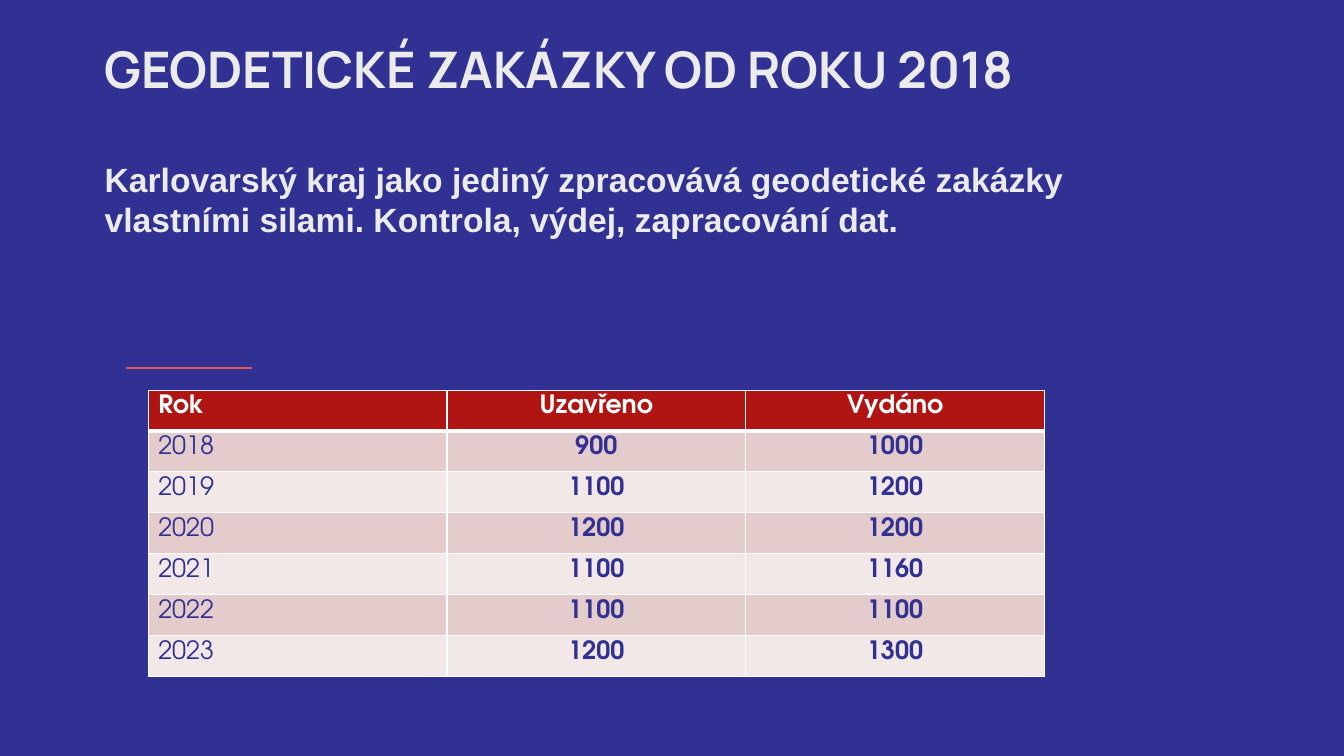
"""Build the slide on geodetic orders since 2018."""
from lxml import etree
from pptx import Presentation
from pptx.dml.color import RGBColor
from pptx.enum import shapes, text
from pptx.oxml import ns
from pptx.util import Inches, Pt

HEADING = "GEODETICKÉ ZAKÁZKY OD ROKU 2018"
SUMMARY = ("Karlovarský kraj jako jediný zpracovává geodetické zakázky "
           "vlastními silami. Kontrola, výdej, zapracování dat.")
ORDERS = [
    ("Rok", "Uzavřeno", "Vydáno"),
    ("2018", "900", "1000"),
    ("2019", "1100", "1200"),
    ("2020", "1200", "1200"),
    ("2021", "1100", "1160"),
    ("2022", "1100", "1100"),
    ("2023", "1200", "1300"),
]

NAVY = RGBColor(0x30, 0x31, 0x92)
PALE = RGBColor(0xEB, 0xEB, 0xEB)
CORAL = RGBColor(0xED, 0x56, 0x54)
RED = RGBColor(0xB0, 0x15, 0x13)
WHITE = RGBColor(0xFF, 0xFF, 0xFF)
BANDS = (RGBColor(0xF2, 0xE8, 0xE7), RGBColor(0xE4, 0xCC, 0xCC))

TABLE_WIDTH, TABLE_HEIGHT = Inches(8.89), Inches(2.84)


def style(paragraph, font_name, size, color, bold=True):
    for run in paragraph.runs:
        run.font.name = font_name
        run.font.size = Pt(size)
        run.font.color.rgb = color
        run.font.bold = bold


def add_borders(cell, top_width, bottom_width):
    properties = cell._tc.get_or_add_tcPr()
    widths = {"lnL": 1, "lnR": 1, "lnT": top_width, "lnB": bottom_width}
    for position, (side, width) in enumerate(widths.items()):
        border = etree.Element(ns.qn(f"a:{side}"), w=str(Pt(width)))
        fill = etree.SubElement(border, ns.qn("a:solidFill"))
        etree.SubElement(fill, ns.qn("a:srgbClr"), val=str(WHITE))
        properties.insert(position, border)


def add_intro(slide):
    box = slide.shapes.add_textbox(Inches(0.94), Inches(0.33), Inches(9.94), Inches(1.53))
    frame = box.text_frame
    frame.word_wrap = True
    heading = frame.paragraphs[0]
    heading.text = HEADING
    style(heading, "Manrope", 36, PALE)
    summary = frame.add_paragraph()
    summary.text = SUMMARY
    summary.space_before = Pt(43)
    style(summary, "Arial", 24, PALE)


def add_accent(slide):
    accent = slide.shapes.add_connector(
        shapes.MSO_CONNECTOR.STRAIGHT, Inches(1.26), Inches(3.65), Inches(2.49), Inches(3.65))
    accent.line.color.rgb = CORAL
    accent.line.width = Pt(2)
    accent.line._get_or_add_ln().set("cap", "rnd")
    etree.SubElement(accent._element.spPr, ns.qn("a:effectLst"))


def add_orders(slide):
    rows, columns = len(ORDERS), len(ORDERS[0])
    table = slide.shapes.add_table(
        rows, columns, Inches(1.47), Inches(3.87), TABLE_WIDTH, TABLE_HEIGHT).table
    for column in table.columns:
        column.width = TABLE_WIDTH // columns
    for row, values in enumerate(ORDERS):
        table.rows[row].height = TABLE_HEIGHT // rows
        header = row == 0
        for column, value in enumerate(values):
            cell = table.cell(row, column)
            cell.fill.solid()
            cell.fill.fore_color.rgb = RED if header else BANDS[row % 2]
            add_borders(cell, 3 if row == 1 else 1, 3 if header else 1)
            paragraph = cell.text_frame.paragraphs[0]
            paragraph.text = value
            paragraph.alignment = text.PP_ALIGN.CENTER if column else text.PP_ALIGN.LEFT
            style(paragraph, "TeX Gyre Adventor", 18,
                  WHITE if header else NAVY, header or column > 0)


def main():
    deck = Presentation()
    deck.slide_width, deck.slide_height = Inches(13.33), Inches(7.5)
    slide = deck.slides.add_slide(deck.slide_layouts[6])
    slide.background.fill.solid()
    slide.background.fill.fore_color.rgb = NAVY
    add_accent(slide)
    add_intro(slide)
    add_orders(slide)
    deck.save("out.pptx")


if __name__ == "__main__":
    main()
